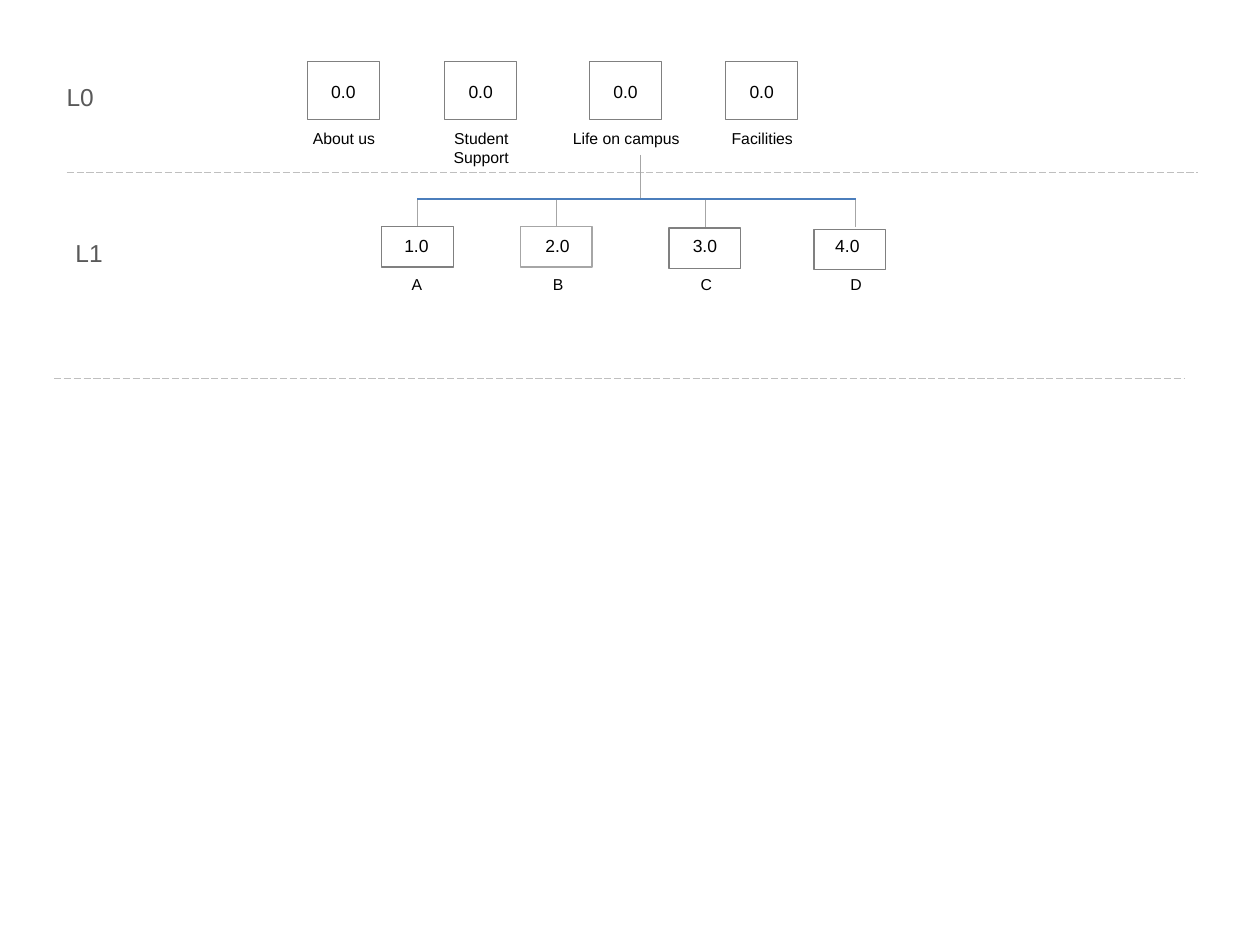
from lxml import etree
from pptx import Presentation
from pptx.dml.color import RGBColor
from pptx.enum.dml import MSO_LINE
from pptx.enum.shapes import MSO_CONNECTOR, MSO_SHAPE
from pptx.enum.text import MSO_AUTO_SIZE, PP_ALIGN
from pptx.oxml.ns import qn
from pptx.util import Inches, Pt

BLACK = RGBColor(0x00, 0x00, 0x00)
DARK_GRAY = RGBColor(0x59, 0x59, 0x59)
MID_GRAY = RGBColor(0x80, 0x80, 0x80)
GRAY = RGBColor(0xA6, 0xA6, 0xA6)
LIGHT_GRAY = RGBColor(0xBF, 0xBF, 0xBF)
BLUE = RGBColor(0x4B, 0x7E, 0xBC)
LEFT, CENTER = PP_ALIGN.LEFT, PP_ALIGN.CENTER
STRAIGHT, RECT = MSO_CONNECTOR.STRAIGHT, MSO_SHAPE.RECTANGLE
LONG_DASH = MSO_LINE.LONG_DASH
FIT = MSO_AUTO_SIZE.SHAPE_TO_FIT_TEXT

BOX_W = 0.57

prs = Presentation()
prs.slide_width, prs.slide_height = Inches(10), Inches(7.5)
s = prs.slides.add_slide(prs.slide_layouts[6])


def add_text(text, x, y, w, h, size, color=BLACK, align=CENTER):
    tf = s.shapes.add_textbox(Inches(x), Inches(y), Inches(w), Inches(h)).text_frame
    tf.word_wrap = True
    tf.auto_size = FIT
    p = tf.paragraphs[0]
    p.alignment = align
    r = p.add_run()
    r.text = text
    font = {"name": "Arial", "size": Pt(size)}
    for name, value in font.items():
        setattr(r.font, name, value)
    r.font.color.rgb = color


def add_line(x1, y1, x2, y2, color=GRAY, width=0.5, dash=None):
    c = s.shapes.add_connector(STRAIGHT, Inches(x1), Inches(y1), Inches(x2), Inches(y2))
    c.line.color.rgb = color
    c.line.width = Pt(width)
    if dash:
        c.line.dash_style = dash
    etree.SubElement(c._element.spPr, qn("a:effectLst"))


# Level names and dashed dividers
add_text("L0", 0.43, 0.6, 0.72, 0.34, 14, DARK_GRAY, LEFT)
add_text("L1", 0.5, 1.84, 0.72, 0.34, 14, DARK_GRAY, LEFT)
for x1, x2, y in [(0.53, 9.51, 1.37), (0.43, 9.4, 3)]:
    add_line(x1, y, x2, y, LIGHT_GRAY, dash=LONG_DASH)

# Connectors: trunk, drops to each child, crossbar
add_line(5.08, 1.23, 5.08, 1.57)
drops = [3.31, 4.42, 5.6, 6.79]
for x in drops:
    add_line(x, 1.58, x, 1.8)
add_line(drops[0], 1.58, drops[-1], 1.58, BLUE, 0.75)

# Rows: box height, number top, caption top, then the nodes as
# box left, box top, outline, number, number left, caption, caption left and width
rows = [
    (0.46, 0.59, 0.97, [
        (2.44, 0.49, MID_GRAY, "0.0", 2.44, "About us", 2.13, 1.2),
        (3.53, 0.49, MID_GRAY, "0.0", 3.53, "Student Support", 3.34, 0.96),
        (4.68, 0.49, MID_GRAY, "0.0", 4.68, "Life on campus", 4.37, 1.2),
        (5.76, 0.49, MID_GRAY, "0.0", 5.76, "Facilities", 5.57, 0.96),
    ]),
    (0.32, 1.82, 2.13, [
        (3.03, 1.8, MID_GRAY, "1.0", 3.02, "A", 2.83, 0.96),
        (4.13, 1.8, GRAY, "2.0", 4.14, "B", 3.95, 0.96),
        (5.31, 1.81, MID_GRAY, "3.0", 5.31, "C", 5.07, 1.07),
        (6.46, 1.82, MID_GRAY, "4.0", 6.44, "D", 6.26, 1.07),
    ]),
]
for box_h, number_y, caption_y, nodes in rows:
    for x, y, outline, number, number_x, caption, caption_x, caption_w in nodes:
        box = s.shapes.add_shape(RECT, Inches(x), Inches(y), Inches(BOX_W), Inches(box_h))
        box.shadow.inherit = False
        box.fill.background()
        box.line.color.rgb = outline
        box.line.width = Pt(0)
        add_text(number, number_x, number_y, BOX_W, 0.27, 10)
        caption_h = 0.4 if caption == "Student Support" else 0.25
        add_text(caption, caption_x, caption_y, caption_w, caption_h, 9)

prs.save("out.pptx")
